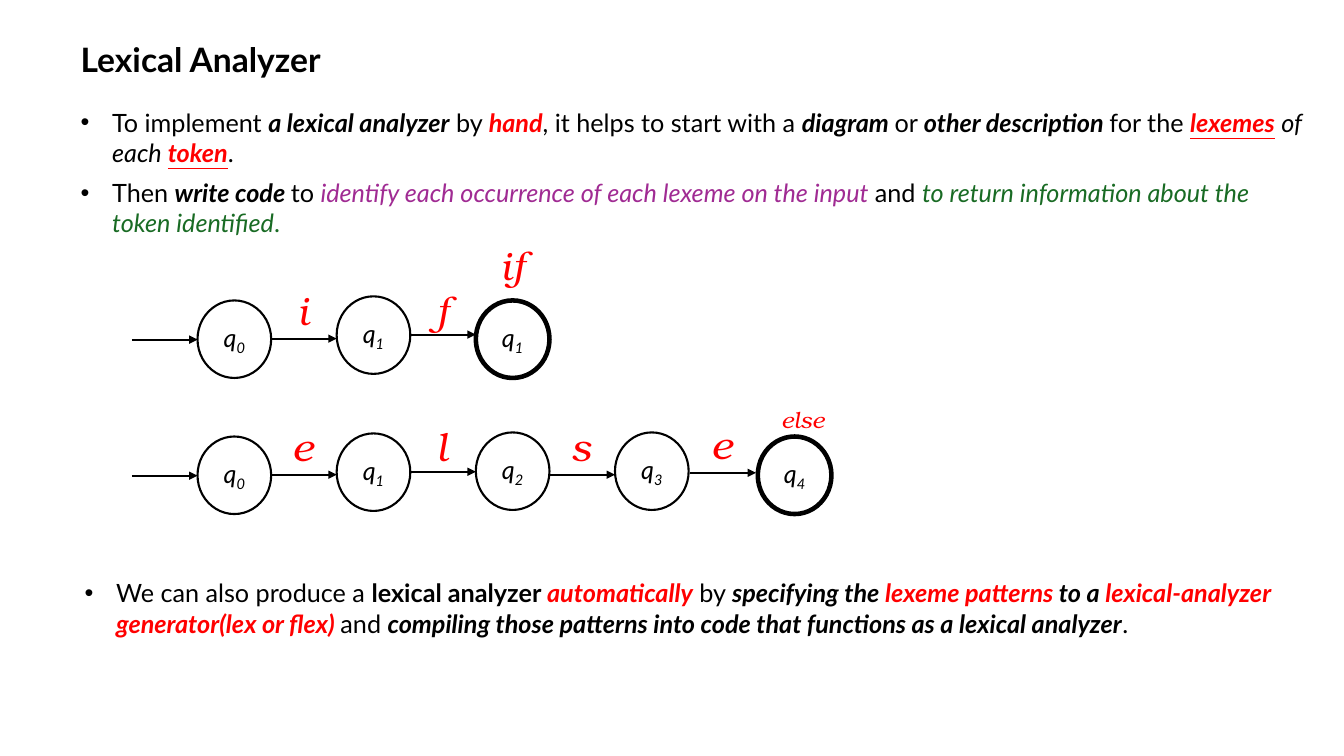
"""Build a slide on writing a lexical analyzer, with two state diagrams."""
from lxml import etree
from pptx import Presentation
from pptx.dml.color import RGBColor
from pptx.enum.shapes import MSO_CONNECTOR, MSO_SHAPE
from pptx.enum.text import MSO_ANCHOR, MSO_AUTO_SIZE, PP_ALIGN
from pptx.oxml.ns import qn
from pptx.util import Pt

LEFT, CENTER = PP_ALIGN.LEFT, PP_ALIGN.CENTER
TOP, MIDDLE = MSO_ANCHOR.TOP, MSO_ANCHOR.MIDDLE
FIXED = MSO_AUTO_SIZE.NONE
OVAL, STRAIGHT = MSO_SHAPE.OVAL, MSO_CONNECTOR.STRAIGHT

COLORS = {"black": "000000", "white": "FFFFFF", "red": "FF0000",
          "purple": "A02B93", "green": "196B24"}
SANS, SERIF = "Lato", "TeX Gyre Bonum"

TITLE = [("Lexical Analyzer", "b", "black")]
HAND = [
    [("To implement ", "", "black"), ("a lexical analyzer", "bi", "black"),
     (" by ", "", "black"), ("hand", "bi", "red"),
     (", it helps to start with a ", "", "black"), ("diagram ", "bi", "black"),
     ("or ", "", "black"), ("other description ", "bi", "black"),
     ("for the ", "", "black"), ("lexemes", "biu", "red"), (" ", "", "black"),
     ("of each ", "i", "black"), ("token", "biu", "red"), (".", "", "black")],
    [("Then ", "", "black"), ("write code ", "bi", "black"), ("to ", "", "black"),
     ("identify each occurrence of each lexeme on the input ", "i", "purple"),
     ("and ", "", "black"),
     ("to return information about the token identified", "i", "green"),
     (".", "", "green")],
]
AUTO = [
    [("We can also produce a ", "", "black"), ("lexical analyzer ", "b", "black"),
     ("automatically", "bi", "red"), (" by ", "", "black"),
     ("specifying the ", "bi", "black"), ("lexeme patterns ", "bi", "red"),
     ("to a ", "bi", "black"),
     ("lexical-analyzer generator(lex or flex) ", "bi", "red"),
     ("and ", "", "black"),
     ("compiling those patterns into code that functions as a lexical analyzer",
      "bi", "black"), (".", "", "black")],
]

# Each step: letter, letter top, arrow height, state top, state number, shift.
STEPS_IF = [("", 0, 242.6, 214.6, "0", 0), ("i", 200.9, 241.9, 211.7, "1", 0),
            ("f", 200.9, 239, 214.6, "1", 0)]
STEPS_ELSE = [("", 0, 339.8, 311.8, "0", 0), ("e", 298.1, 339.1, 309.6, "1", 0),
              ("l", 298.1, 337, 308.9, "2", 0), ("s", 298.1, 339.1, 308.9, "3", 0),
              ("e", 296.6, 337.7, 311.8, "4", 2.6)]
WORDS = [("if", (347, 168.5, 38.2, 41), 0), ("else", (516.2, 267.8, 114.5, 30.2), -25)]

START, PITCH, REACH = 94.3, 99.4, 46.8
WIDE, HIGH = 52.6, 55.4


def color(name):
    return RGBColor.from_string(COLORS[name])


def write(par, parts, size, face=SANS):
    par.text = ""
    for text, style, tint in parts:
        run = par.add_run()
        run.text = text
        font = run.font
        font.name, font.size = face, Pt(size)
        font.bold, font.italic = "b" in style, "i" in style
        font.underline = "u" in style
        font.color.rgb = color(tint)


def lower(run, base):
    run.font._element.set("baseline", str(base * 1000))


def place(shape, left, top, width, height):
    shape.left, shape.top = Pt(left), Pt(top)
    shape.width, shape.height = Pt(width), Pt(height)
    frame = shape.text_frame
    frame.auto_size, frame.vertical_anchor = FIXED, TOP
    return frame


def bullets(shape, top, left, items):
    frame = place(shape, left, top, 893.5, 51.1 * len(items))
    frame.word_wrap = True
    for k, parts in enumerate(items):
        par = frame.add_paragraph() if k else frame.paragraphs[0]
        props = par._p.get_or_add_pPr()
        props.set("marL", str(Pt(22.5)))
        props.set("indent", str(Pt(-22.5)))
        write(par, parts, 18)
        par.space_before = Pt(7.2 if k else 0)


def label(slide, text, box, base=0):
    frame = slide.shapes.add_textbox(*map(Pt, box)).text_frame
    frame.word_wrap = True
    par = frame.paragraphs[0]
    par.alignment = CENTER
    write(par, [(text, "i", "red")], 28, SERIF)
    if base:
        lower(par.runs[0], base)


def state(slide, left, top, number, final):
    oval = slide.shapes.add_shape(OVAL, Pt(left), Pt(top), Pt(WIDE), Pt(HIGH))
    oval.shadow.inherit = False
    oval.fill.solid()
    oval.fill.fore_color.rgb = color("white")
    oval.line.color.rgb = color("black")
    oval.line.width = Pt(3.25 if final else 1.5)
    frame = oval.text_frame
    frame.vertical_anchor = MIDDLE
    par = frame.paragraphs[0]
    par.alignment = CENTER
    write(par, [("q", "i", "black"), (number, "i", "black")], 18)
    lower(par.runs[1], -25)


def arrow(slide, left, high):
    wire = slide.shapes.add_connector(
        STRAIGHT, Pt(left), Pt(high), Pt(left + REACH), Pt(high))
    wire.line.color.rgb = color("black")
    wire.line.width = Pt(1.5)
    props = wire._element.spPr
    etree.SubElement(props.find(qn("a:ln")), qn("a:tailEnd"), type="triangle")
    etree.SubElement(props, qn("a:effectLst"))


def chain(slide, steps):
    for k, (letter, rise, high, top, number, shift) in enumerate(steps):
        left = START + PITCH * k
        arrow(slide, left + shift / 2, high)
        state(slide, left + REACH + shift, top, number, k == len(steps) - 1)
        if letter:
            label(slide, letter, (left + 8 + shift / 2, rise, 29.5, 41))


def main():
    deck = Presentation()
    deck.slide_width, deck.slide_height = Pt(960), Pt(540)
    slide = deck.slides.add_slide(deck.slide_layouts[3])
    title, hand, auto = slide.placeholders
    frame = place(title, 50.4, 24.5, 192.2, 36)
    frame.word_wrap = False
    frame.paragraphs[0].alignment = LEFT
    write(frame.paragraphs[0], TITLE, 24)
    bullets(hand, 72.7, 50.4, HAND)
    bullets(auto, 409, 53.3, AUTO)
    for steps in (STEPS_IF, STEPS_ELSE):
        chain(slide, steps)
    for word in WORDS:
        label(slide, *word)
    deck.save("out.pptx")


if __name__ == "__main__":
    main()
